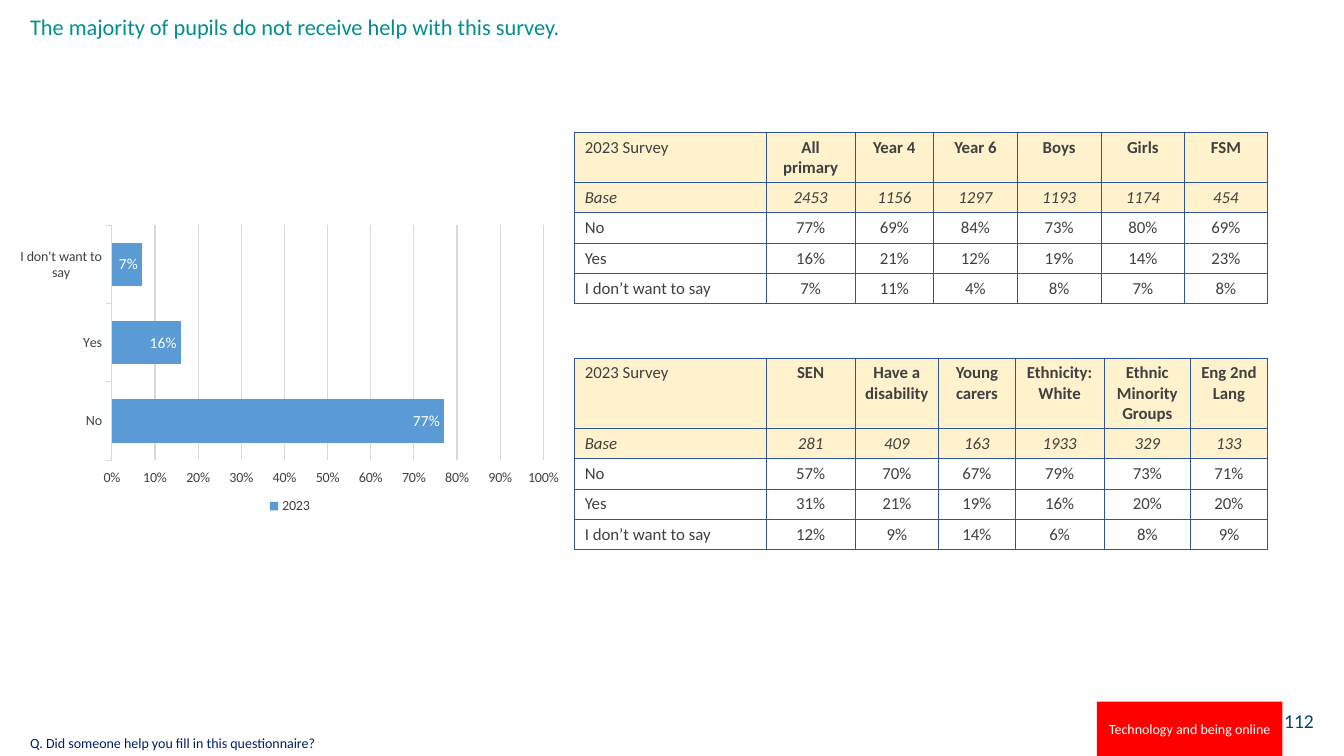
import dataclasses

import lxml.etree
import pptx
import pptx.chart.data
import pptx.dml.color
import pptx.enum.chart
import pptx.enum.shapes
import pptx.enum.text
import pptx.oxml.ns
import pptx.util

Inches = pptx.util.Inches
Pt = pptx.util.Pt
qn = pptx.oxml.ns.qn
Align = pptx.enum.text.PP_ALIGN
Anchor = pptx.enum.text.MSO_ANCHOR


def colour(code):
    return pptx.dml.color.RGBColor.from_string(code)


@dataclasses.dataclass(frozen=True)
class Theme:
    font: str = "Calibri"
    title: str = "008E91"
    question: str = "002060"
    number: str = "004376"
    grey: str = "404040"
    white: str = "FFFFFF"
    red: str = "FF0000"
    header: str = "FFF2CC"
    border: str = "2F5597"
    bar: str = "5B9BD5"
    grid: str = "D9D9D9"
    title_size: int = 16
    number_size: int = 14
    table_size: int = 12
    label_size: int = 11
    small_size: int = 10


THEME = Theme()


def apply(target, values):
    for name, value in values.items():
        setattr(target, name, value)


def style_font(font, size, code, **extra):
    apply(font, {"name": THEME.font, "size": Pt(size), **extra})
    font.color.rgb = colour(code)


def write(frame, text, size, code, align=Align.LEFT, spacing=None, **extra):
    para = frame.paragraphs[0]
    apply(para, {"alignment": align, "line_spacing": spacing})
    span = para.add_run()
    span.text = text
    style_font(span.font, size, code, **extra)


def add_text(page, area, text, size, code, anchor=Anchor.TOP, spacing=None):
    box = page.shapes.add_textbox(*map(Inches, area))
    apply(box.text_frame, {"word_wrap": True, "vertical_anchor": anchor})
    write(box.text_frame, text, size, code, spacing=spacing)


def add_block(page, area, fill, text, size, code, align):
    block = page.shapes.add_shape(
        pptx.enum.shapes.MSO_SHAPE.RECTANGLE, *map(Inches, area))
    block.shadow.inherit = False
    block.fill.solid()
    block.fill.fore_color.rgb = colour(fill)
    block.line.fill.background()
    apply(block.text_frame, {"word_wrap": True, "vertical_anchor": Anchor.MIDDLE})
    write(block.text_frame, text, size, code, align)


def add_borders(cell):
    properties = cell._tc.get_or_add_tcPr()
    for index, side in enumerate(("a:lnL", "a:lnR", "a:lnT", "a:lnB")):
        line = lxml.etree.Element(qn(side), w=str(Pt(0.5)))
        fill = lxml.etree.SubElement(line, qn("a:solidFill"))
        lxml.etree.SubElement(fill, qn("a:srgbClr"), val=THEME.border)
        properties.insert(index, line)


def add_survey_table(page, top, widths, header_height, rows):
    heights = [header_height] + [0.3] * (len(rows) - 1)
    table = page.shapes.add_table(
        len(rows), len(widths), Inches(5.7), Inches(top),
        Inches(sum(widths)), Inches(sum(heights))).table
    apply(table, {"first_row": False, "horz_banding": False})
    for column, width in zip(table.columns, widths):
        column.width = Inches(width)
    for r, values in enumerate(rows):
        table.rows[r].height = Inches(heights[r])
        for c, value in enumerate(values):
            cell = table.cell(r, c)
            cell.vertical_anchor = Anchor.MIDDLE if r else Anchor.TOP
            if c:
                apply(cell, {"margin_left": Inches(0.07), "margin_right": Inches(0.07)})
            if r < 2:
                cell.fill.solid()
                cell.fill.fore_color.rgb = colour(THEME.header)
            else:
                cell.fill.background()
            add_borders(cell)
            write(cell.text_frame, value, THEME.table_size, THEME.grey,
                  Align.CENTER if c else Align.LEFT,
                  bold=r == 0 and c > 0, italic=r == 1)


def place_plot(chart, **area):
    plot_area = chart._chartSpace.chart.plotArea
    for old in plot_area.findall(qn("c:layout")):
        plot_area.remove(old)
    layout = lxml.etree.Element(qn("c:layout"))
    manual = lxml.etree.SubElement(layout, qn("c:manualLayout"))
    settings = {"layoutTarget": "inner", "xMode": "edge", "yMode": "edge", **area}
    for name, value in settings.items():
        lxml.etree.SubElement(manual, qn("c:" + name), val=str(value))
    plot_area.insert(0, layout)


def style_line(line):
    line.width = Pt(0.75)
    line.color.rgb = colour(THEME.grid)


def add_help_chart(page):
    enum = pptx.enum.chart
    data = pptx.chart.data.CategoryChartData(number_format="0%")
    data.categories = ["No", "Yes", "I don't want to say"]
    data.add_series("2023", [0.77, 0.16, 0.07])
    chart = page.shapes.add_chart(
        enum.XL_CHART_TYPE.BAR_CLUSTERED, Inches(0.2), Inches(1.95),
        Inches(5.35), Inches(3.19), data).chart
    apply(chart, {"has_title": False, "has_legend": True})
    style_font(chart.font, THEME.small_size, THEME.grey)
    apply(chart.legend, {"position": enum.XL_LEGEND_POSITION.BOTTOM,
                         "include_in_layout": False})
    style_font(chart.legend.font, THEME.small_size, THEME.grey)
    place_plot(chart, x=0.17, y=0.09, w=0.8, h=0.73)

    # Axes
    for axis in (chart.category_axis, chart.value_axis):
        axis.major_tick_mark = enum.XL_TICK_MARK.OUTSIDE
        style_font(axis.tick_labels.font, THEME.small_size, THEME.grey)
    style_line(chart.category_axis.format.line)
    scale = chart.value_axis
    apply(scale, {"minimum_scale": 0, "maximum_scale": 1, "major_unit": 0.1,
                  "has_major_gridlines": True})
    apply(scale.tick_labels, {"number_format": "0%", "number_format_is_linked": False})
    scale.format.line.fill.background()
    style_line(scale.major_gridlines.format.line)

    # Bars and their labels
    plot = chart.plots[0]
    apply(plot, {"gap_width": 80, "overlap": -25, "vary_by_categories": False})
    bars = plot.series[0]
    bars.format.fill.solid()
    bars.format.fill.fore_color.rgb = colour(THEME.bar)
    labels = bars.data_labels
    apply(labels, {"show_value": True, "number_format": "0%",
                   "number_format_is_linked": False,
                   "position": enum.XL_LABEL_POSITION.INSIDE_END})
    style_font(labels.font, THEME.label_size, THEME.white)


def main():
    deck = pptx.Presentation()
    apply(deck, {"slide_width": Inches(13.33), "slide_height": Inches(7.5)})
    page = deck.slides.add_slide(deck.slide_layouts[6])

    # Page number, title and question
    add_block(page, (12.54, 6.95, 0.59, 0.4), THEME.white, "112",
              THEME.number_size, THEME.number, Align.RIGHT)
    add_text(page, (0.2, 0.11, 12.7, 0.98),
             "The majority of pupils do not receive help with this survey.",
             THEME.title_size, THEME.title, spacing=0.9)
    add_text(page, (0.2, 7.23, 7.73, 0.27),
             "Q. Did someone help you fill in this questionnaire?",
             THEME.small_size, THEME.question, Anchor.BOTTOM)

    # Results by year group, gender and meals
    add_survey_table(page, 1.31, (1.9, 0.88, 0.78, 0.83, 0.83, 0.83, 0.82), 0.5, (
        ("2023 Survey", "All primary", "Year 4", "Year 6", "Boys", "Girls", "FSM"),
        ("Base", "2453", "1156", "1297", "1193", "1174", "454"),
        ("No", "77%", "69%", "84%", "73%", "80%", "69%"),
        ("Yes", "16%", "21%", "12%", "19%", "14%", "23%"),
        ("I don’t want to say", "7%", "11%", "4%", "8%", "7%", "8%")))

    # Results by need and background
    add_survey_table(page, 3.55, (1.9, 0.88, 0.83, 0.76, 0.88, 0.86, 0.76), 0.7, (
        ("2023 Survey", "SEN", "Have a disability", "Young carers",
         "Ethnicity: White", "Ethnic Minority Groups", "Eng 2nd Lang"),
        ("Base", "281", "409", "163", "1933", "329", "133"),
        ("No", "57%", "70%", "67%", "79%", "73%", "71%"),
        ("Yes", "31%", "21%", "19%", "16%", "20%", "20%"),
        ("I don’t want to say", "12%", "9%", "14%", "6%", "8%", "9%")))

    # Section tag and chart
    add_block(page, (10.88, 6.96, 1.84, 0.54), THEME.red,
              "Technology and being online", THEME.small_size, THEME.white,
              Align.CENTER)
    add_help_chart(page)
    deck.save("out.pptx")


if __name__ == "__main__":
    main()
